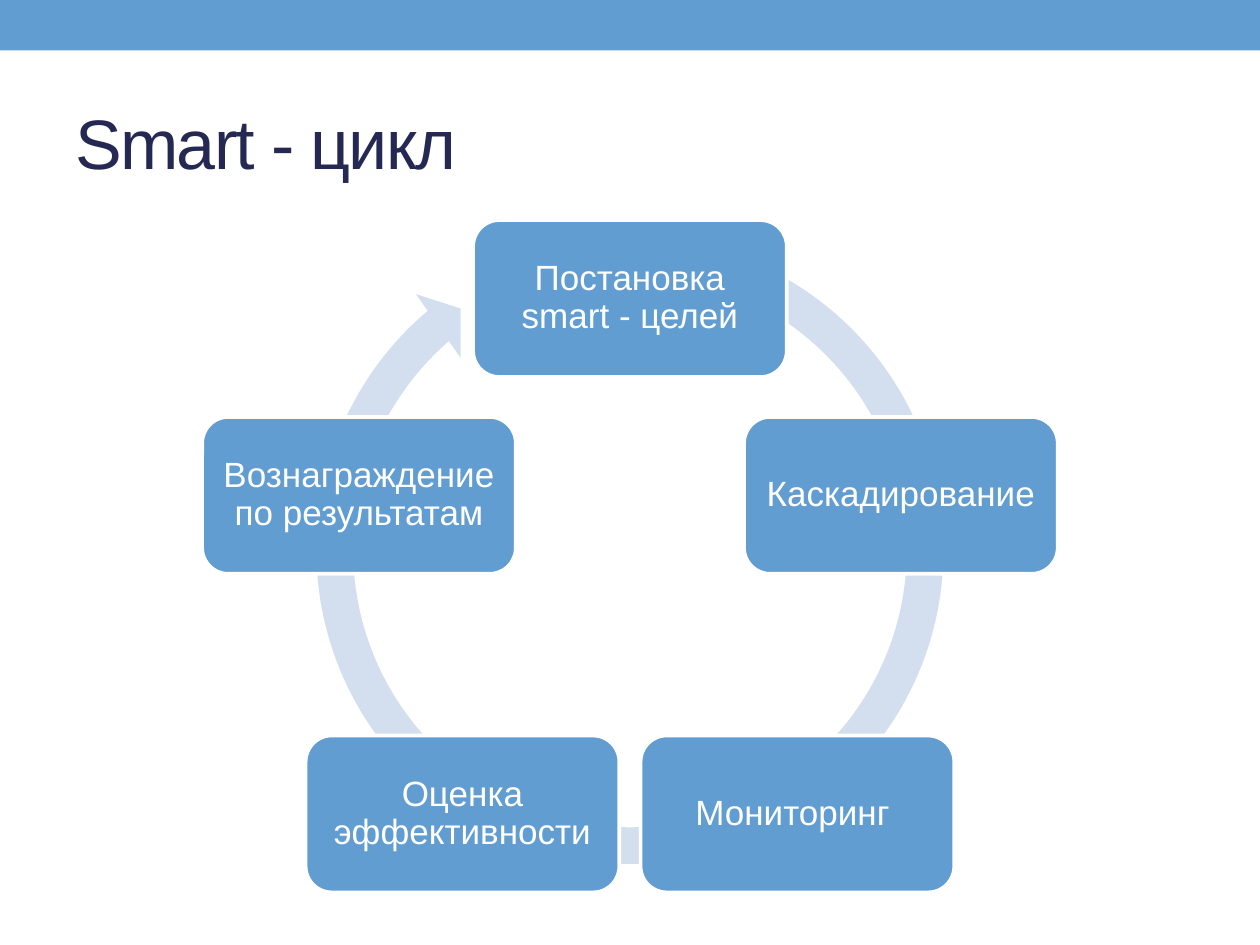
from dataclasses import dataclass
from math import cos, pi, sin

from pptx import Presentation
from pptx.dml.color import RGBColor
from pptx.enum.shapes import MSO_SHAPE
from pptx.enum.text import MSO_ANCHOR, PP_ALIGN
from pptx.util import Pt

RECT = MSO_SHAPE.RECTANGLE
ROUNDED = MSO_SHAPE.ROUNDED_RECTANGLE
RING_ARROW = MSO_SHAPE.CIRCULAR_ARROW
MIDDLE = MSO_ANCHOR.MIDDLE
LEFT, CENTER = PP_ALIGN.LEFT, PP_ALIGN.CENTER
TITLE_ONLY = 5

SLIDE_W, SLIDE_H = 720, 540
STAGE_W, STAGE_H = 179.2, 89.6
CYCLE_X, CYCLE_Y, CYCLE_RADIUS = 360, 333.4, 162.8
RING_SIZE = 381.6

# Clockwise from the top; a trailing space counts in the centring
STAGES = [
    "Постановка smart - целей",
    "Каскадирование ",
    "Мониторинг ",
    "Оценка эффективности",
    "Вознаграждение по результатам",
]


@dataclass(frozen=True)
class Theme:
    accent: RGBColor = RGBColor(0x62, 0x9D, 0xD1)
    ring: RGBColor = RGBColor(0xD3, 0xDF, 0xEE)
    title: RGBColor = RGBColor(0x24, 0x28, 0x52)
    light: RGBColor = RGBColor(0xFF, 0xFF, 0xFF)
    font: str = "Arial"
    title_size: int = 40
    stage_size: int = 20


class CycleSlide:
    def __init__(self, slide, theme):
        self.slide = slide
        self.theme = theme

    def format_text(self, paragraph, size, color, align):
        paragraph.alignment = align
        paragraph.font.name = self.theme.font
        paragraph.font.size = Pt(size)
        paragraph.font.color.rgb = color

    def title(self, text, left, top, width, height):
        heading = self.slide.shapes.title
        heading.left, heading.top = Pt(left), Pt(top)
        heading.width, heading.height = Pt(width), Pt(height)
        frame = heading.text_frame
        frame.text = text
        frame.vertical_anchor = MIDDLE
        line = frame.paragraphs[0]
        self.format_text(line, self.theme.title_size, self.theme.title, LEFT)
        # Letter spacing of -1 pt
        line.runs[0].font._element.set("spc", "-100")

    def shape(self, preset, left, top, width, height, fill):
        shape = self.slide.shapes.add_shape(
            preset, Pt(left), Pt(top), Pt(width), Pt(height))
        shape.shadow.inherit = False
        shape.fill.solid()
        shape.fill.fore_color.rgb = fill
        shape.line.fill.background()
        return shape

    def band(self, height):
        self.shape(RECT, 0, 0, SLIDE_W, height, self.theme.accent)

    def ring(self, center_x, center_y, size):
        ring = self.shape(RING_ARROW, center_x - size / 2, center_y - size / 2,
                          size, size, self.theme.ring)
        # Thickness, head angle, end angle, start angle, head width
        for index, value in enumerate((0.055, 3.31, 137.71, 173.89, 0.058)):
            ring.adjustments[index] = value

    def stage(self, text, center_x, center_y):
        box = self.shape(ROUNDED, center_x - STAGE_W / 2, center_y - STAGE_H / 2,
                         STAGE_W, STAGE_H, self.theme.accent)
        box.line.color.rgb = self.theme.light
        box.line.width = Pt(2.08)
        frame = box.text_frame
        frame.word_wrap = True
        frame.vertical_anchor = MIDDLE
        frame.margin_left = frame.margin_right = Pt(6)
        frame.margin_top = frame.margin_bottom = Pt(6)
        frame.text = text
        label = frame.paragraphs[0]
        label.line_spacing = 0.9
        self.format_text(label, self.theme.stage_size, self.theme.light, CENTER)


def main():
    prs = Presentation()
    prs.slide_width, prs.slide_height = Pt(SLIDE_W), Pt(SLIDE_H)
    slide = prs.slides.add_slide(prs.slide_layouts[TITLE_ONLY])
    page = CycleSlide(slide, Theme())

    # Header
    page.band(28.8)
    page.title("Smart - цикл", 36, 41.8, 648, 77.8)

    # Cycle: the ring, then the stages evenly spaced around it
    page.ring(CYCLE_X, 314.6, RING_SIZE)
    for index, text in enumerate(STAGES):
        angle = 2 * pi * index / len(STAGES)
        page.stage(text, CYCLE_X + CYCLE_RADIUS * sin(angle),
                   CYCLE_Y - CYCLE_RADIUS * cos(angle))

    prs.save("out.pptx")


if __name__ == "__main__":
    main()
